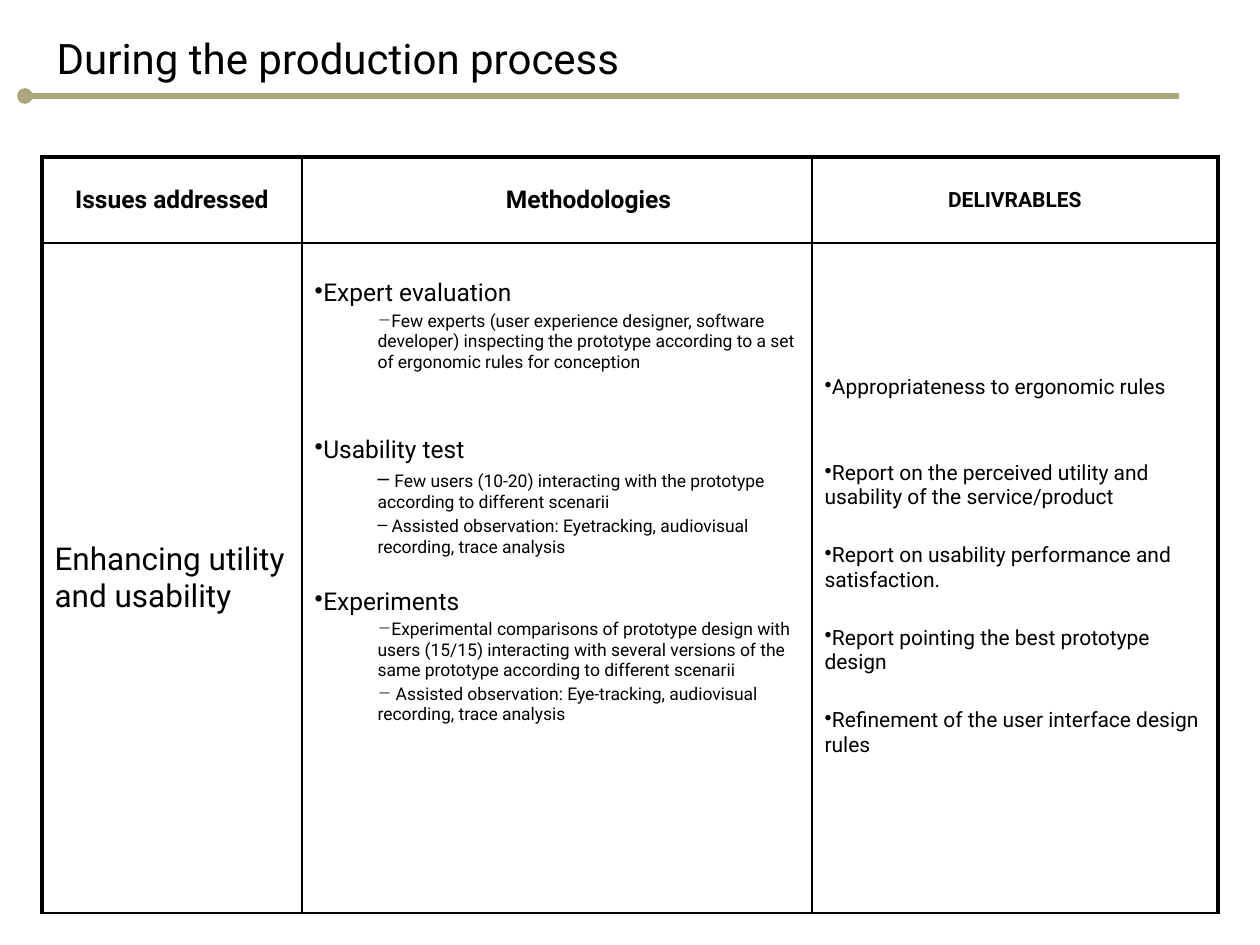
from lxml.etree import SubElement
from pptx import Presentation
from pptx.dml.color import RGBColor
from pptx.enum.shapes import MSO_CONNECTOR
from pptx.enum.text import MSO_ANCHOR, PP_ALIGN
from pptx.oxml.ns import qn
from pptx.util import Pt

SCALE = 914400 / 126
BLACK, SAND = "000000", "AEA57A"
TITLE = "During the production process"
COLS, ROWS = [260, 510, 406], [86, 670]

HEAD = {"size": 14, "bold": True, "align": PP_ALIGN.CENTER}
ITEM = {"size": 14, "bullet": "•"}
SUB = {"size": 10, "level": 1, "bullet": "−", "gap": 2}
DASH = {**SUB, "bullet": "–"}
GOAL = {"size": 12, "bullet": "•", "gap": 19}

CELLS = [
    [
        [("Issues addressed", HEAD)],
        [("Methodologies", {**HEAD, "level": 1})],
        [("DELIVRABLES", {**HEAD, "size": 12})],
    ],
    [
        [("Enhancing utility and usability", {"size": 18})],
        [
            ("Expert evaluation", ITEM),
            ("Few experts (user experience designer, software developer) inspecting "
             "the prototype according to a set of ergonomic rules for conception", SUB),
            ("Usability test", {**ITEM, "gap": 36}),
            ("Few users (10-20) interacting with the prototype according to "
             "different scenarii", {**DASH, "lead": 12}),
            (" Assisted observation: Eyetracking, audiovisual recording, trace analysis", DASH),
            ("Experiments", {**ITEM, "gap": 17}),
            ("Experimental comparisons of prototype design with users (15/15) interacting "
             "with several versions of the same prototype according to different scenarii", SUB),
            (" Assisted observation: Eye-tracking, audiovisual recording, trace analysis", SUB),
        ],
        [
            ("Appropriateness to ergonomic rules", GOAL),
            ("Report on the perceived utility and usability of the service/product",
             {**GOAL, "gap": 35}),
            ("Report on usability performance and satisfaction.", GOAL),
            ("Report pointing the best prototype design", GOAL),
            ("Refinement of the user interface design rules", GOAL),
        ],
    ],
]
LAYOUT = {
    (1, 1): {"vertical_anchor": MSO_ANCHOR.TOP, "margin_top": 36},
    (1, 2): {"margin_bottom": 30},
}


def px(num):
    return round(num * SCALE)


def color(code):
    return RGBColor.from_string(code)


def add_run(para, text, size, bold=False):
    run = para.add_run()
    run.text = text
    look = {"name": "Roboto", "size": Pt(size), "bold": bold}
    for key, val in look.items():
        setattr(run.font, key, val)
    run.font.color.rgb = color(BLACK)


def write(frame, items):
    for num, (text, form) in enumerate(items):
        para = frame.add_paragraph() if num else frame.paragraphs[0]
        level = form.get("level", 0)
        look = {
            "level": level,
            "alignment": form.get("align", PP_ALIGN.LEFT),
            "space_before": Pt(form.get("gap", 0) if num else 0),
        }
        for key, val in look.items():
            setattr(para, key, val)
        props = para._p.get_or_add_pPr()
        props.set("marL", str(px(63 * level)))
        props.set("indent", "0")
        if "bullet" in form:
            SubElement(props, qn("a:buChar"), char=form["bullet"])
        if "lead" in form:
            add_run(para, " ", form["lead"])
        add_run(para, text, form["size"], form.get("bold", False))


def add_edges(cell, row, col):
    thick = {"L": col == 0, "R": col == len(COLS) - 1, "T": row == 0, "B": False}
    props = cell._tc.get_or_add_tcPr()
    for side, outer in thick.items():
        edge = SubElement(props, qn("a:ln" + side), w=str(Pt(2.25 if outer else 1)))
        fill = SubElement(edge, qn("a:solidFill"))
        SubElement(fill, qn("a:srgbClr"), val=BLACK)


def add_rule(slide):
    rule = slide.shapes.add_connector(
        MSO_CONNECTOR.STRAIGHT, px(25), px(96), px(1179), px(96))
    rule.line.color.rgb = color(SAND)
    rule.line.width = Pt(3)
    SubElement(rule.line._get_or_add_ln(), qn("a:headEnd"), type="oval")
    SubElement(rule._element.spPr, qn("a:effectLst"))


def add_title(slide):
    title = slide.shapes.title
    place = {"left": 44, "top": 0, "width": 1113, "height": 115}
    for key, val in place.items():
        setattr(title, key, px(val))
    title.text_frame.vertical_anchor = MSO_ANCHOR.MIDDLE
    write(title.text_frame, [(TITLE, {"size": 24})])


def add_grid(slide):
    table = slide.shapes.add_table(
        len(ROWS), len(COLS), px(42), px(157), px(sum(COLS)), px(sum(ROWS))).table
    table.first_row = table.horz_banding = False
    for col, width in zip(table.columns, COLS):
        col.width = px(width)
    for row, height in zip(table.rows, ROWS):
        row.height = px(height)
    for r, line in enumerate(CELLS):
        for c, items in enumerate(line):
            cell = table.cell(r, c)
            add_edges(cell, r, c)
            cell.fill.background()
            look = {"vertical_anchor": MSO_ANCHOR.MIDDLE, **LAYOUT.get((r, c), {})}
            for key, val in look.items():
                setattr(cell, key, px(val) if key.startswith("margin") else val)
            write(cell.text_frame, items)


def main():
    deck = Presentation()
    deck.slide_width, deck.slide_height = px(1260), px(945)
    slide = deck.slides.add_slide(deck.slide_layouts[5])
    add_rule(slide)
    add_title(slide)
    add_grid(slide)
    deck.save("out.pptx")


if __name__ == "__main__":
    main()
